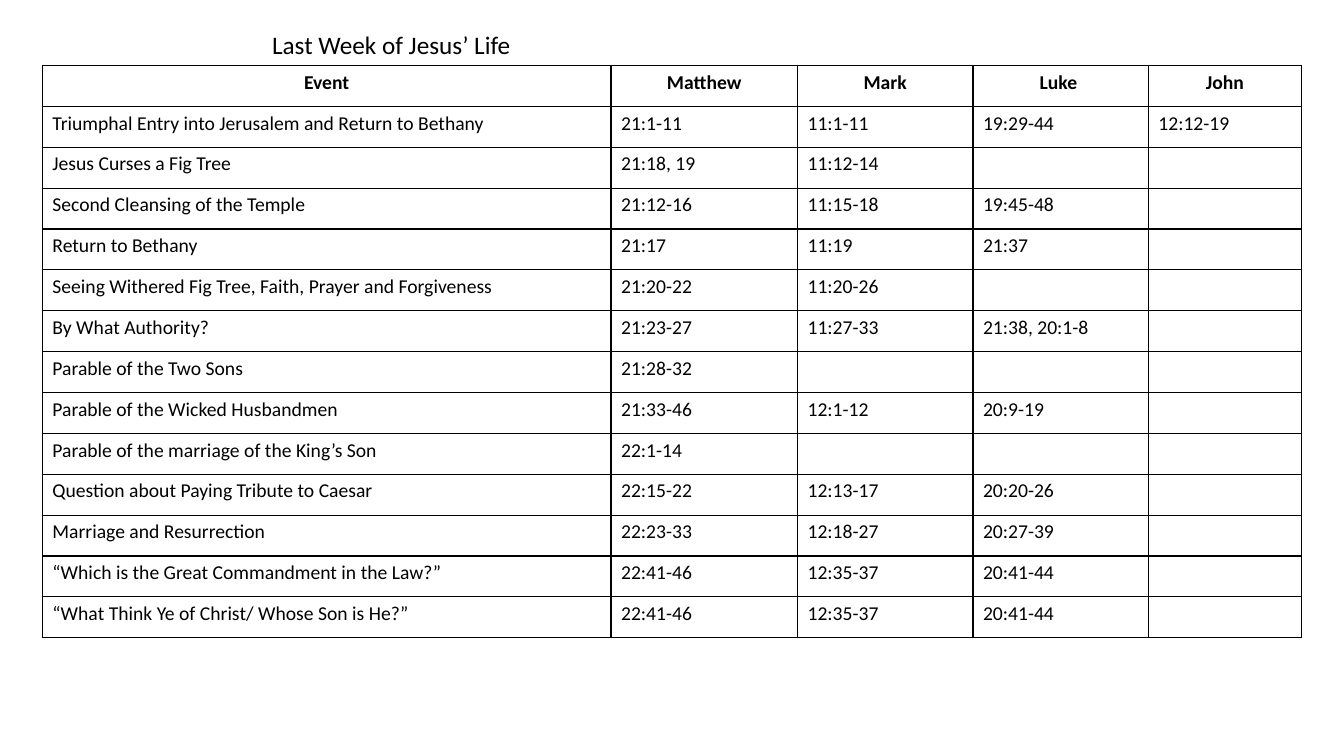
from pptx import Presentation
from pptx.dml.color import RGBColor
from pptx.enum.text import MSO_AUTO_SIZE, PP_ALIGN
from pptx.oxml.ns import qn
from pptx.util import Inches, Pt
from lxml import etree

LEFT, CENTER = PP_ALIGN.LEFT, PP_ALIGN.CENTER
FIT_SHAPE = MSO_AUTO_SIZE.SHAPE_TO_FIT_TEXT

COLORS = {"ink": "000000", "rule": "000000"}

GOSPELS = ["Event", "Matthew", "Mark", "Luke ", "John"]
COLUMN_WIDTHS = [5.64, 1.85, 1.74, 1.74, 1.52]
EVENTS = [
    ["Triumphal Entry into Jerusalem and Return to Bethany", "21:1-11", "11:1-11", "19:29-44", "12:12-19"],
    ["Jesus Curses a Fig Tree", "21:18, 19", "11:12-14", "", ""],
    ["Second Cleansing of the Temple", "21:12-16", "11:15-18", "19:45-48", ""],
    ["Return to Bethany", "21:17", "11:19", "21:37", ""],
    ["Seeing Withered Fig Tree, Faith, Prayer and Forgiveness", "21:20-22", "11:20-26", "", ""],
    ["By What Authority?", "21:23-27", "11:27-33", "21:38, 20:1-8", ""],
    ["Parable of the Two Sons", "21:28-32", "", "", ""],
    ["Parable of the Wicked Husbandmen", "21:33-46", "12:1-12", "20:9-19", ""],
    ["Parable of the marriage of the King’s Son", "22:1-14", "", "", ""],
    ["Question about Paying Tribute to Caesar", "22:15-22", "12:13-17", "20:20-26", ""],
    ["Marriage and Resurrection", "22:23-33", "12:18-27", "20:27-39", ""],
    ["“Which is the Great Commandment in the Law?”", "22:41-46", "12:35-37", "20:41-44", ""],
    ["“What Think Ye of Christ/ Whose Son is He?”", "22:41-46", "12:35-37", "20:41-44", ""],
]


def write(frame, text, size=14, bold=False, align=LEFT, font="Calibri", color="ink"):
    paragraph = frame.paragraphs[0]
    paragraph.alignment = align
    if text:
        run = paragraph.add_run()
        run.text = text
        run.font.name = font
        run.font.size = Pt(size)
        run.font.bold = bold
        run.font.color.rgb = RGBColor.from_string(COLORS[color])


def add_borders(cell, width=1, color="rule"):
    properties = cell._tc.get_or_add_tcPr()
    for side in ("lnL", "lnR", "lnT", "lnB"):
        border = etree.SubElement(properties, qn(f"a:{side}"), w=str(Pt(width)))
        fill = etree.SubElement(border, qn("a:solidFill"))
        etree.SubElement(fill, qn("a:srgbClr"), val=COLORS[color])


class SlideBuilder:
    def __init__(self, slide, title_size=18, table_size=14):
        self.slide = slide
        self.title_size = title_size
        self.table_size = table_size

    def title(self, text, left, top, width, height):
        box = self.slide.shapes.add_textbox(Inches(left), Inches(top), Inches(width), Inches(height))
        frame = box.text_frame
        frame.word_wrap = True
        frame.auto_size = FIT_SHAPE
        write(frame, text, size=self.title_size)

    def table(self, header, body, widths, left, top, height):
        """Add a bordered grid with equal row heights and a bold, centred header."""
        rows = [header] + body
        table = self.slide.shapes.add_table(
            len(rows), len(header), Inches(left), Inches(top), Inches(sum(widths)), Inches(height)
        ).table
        table.first_row = table.horz_banding = False
        for column, width in zip(table.columns, widths):
            column.width = Inches(width)
        for r, entries in enumerate(rows):
            is_header = r == 0
            for c, entry in enumerate(entries):
                cell = table.cell(r, c)
                add_borders(cell)
                cell.fill.background()
                write(cell.text_frame, entry, size=self.table_size, bold=is_header,
                      align=CENTER if is_header else LEFT)


def main():
    deck = Presentation()
    deck.slide_width, deck.slide_height = Inches(13.33), Inches(7.5)
    builder = SlideBuilder(deck.slides.add_slide(deck.slide_layouts[6]))
    builder.title("Last Week of Jesus’ Life", 2.6, 0.24, 6.52, 0.4)
    builder.table(GOSPELS, EVENTS, COLUMN_WIDTHS, 0.42, 0.65, 5.68)
    deck.save("out.pptx")


if __name__ == "__main__":
    main()
